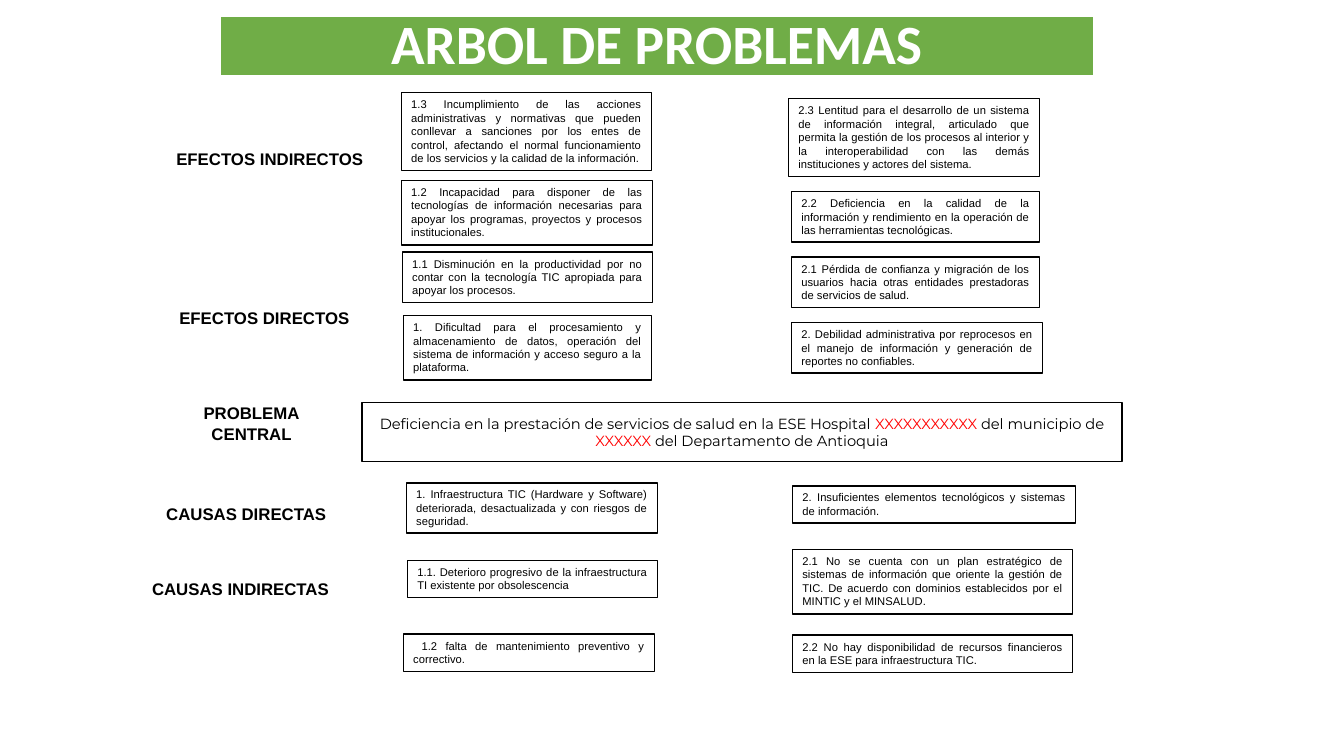
from pptx import Presentation
from pptx import util as u
from pptx.dml.color import RGBColor
from pptx.enum import shapes, text

COLORS = {"green": "70AD47", "white": "FFFFFF", "black": "000000", "red": "FF0000"}
ALIGN = text.PP_ALIGN
ANCHOR = text.MSO_ANCHOR

EFFECTS = [
    (0.06, 0, 2.48, 0.77, "1.3 Incumplimiento de las acciones administrativas y normativas que pueden conllevar a sanciones por los entes de control, afectando el normal funcionamiento de los servicios y la calidad de la información."),
    (0.06, 0.87, 2.49, 0.64, "1.2 Incapacidad para disponer de las tecnologías de información necesarias para apoyar los programas, proyectos y procesos institucionales."),
    (0.07, 1.58, 2.48, 0.5, "1.1 Disminución en la productividad por no contar con la tecnología TIC apropiada para apoyar los procesos."),
    (0.08, 2.21, 2.46, 0.64, "1. Dificultad para el procesamiento y almacenamiento de datos, operación del sistema de información y acceso seguro a la plataforma."),
    (3.9, 0.06, 2.49, 0.77, "2.3 Lentitud para el desarrollo de un sistema de información integral, articulado que permita la gestión de los procesos al interior y la interoperabilidad con las demás instituciones y actores del sistema."),
    (3.93, 0.98, 2.46, 0.5, "2.2 Deficiencia en la calidad de la información y rendimiento en la operación de las herramientas tecnológicas."),
    (3.93, 1.63, 2.46, 0.5, "2.1 Pérdida de confianza y migración de los usuarios hacia otras entidades prestadoras de servicios de salud."),
    (3.93, 2.28, 2.49, 0.5, "2. Debilidad administrativa por reprocesos en el manejo de información y generación de reportes no confiables."),
]
CAUSES = [
    (0.11, 0, 2.49, 0.5, "1. Infraestructura TIC (Hardware y Software) deteriorada, desactualizada y con riesgos de seguridad."),
    (0.12, 0.77, 2.48, 0.37, "1.1. Deterioro progresivo de la infraestructura TI existente por obsolescencia"),
    (0.08, 1.5, 2.49, 0.37, " 1.2 falta de mantenimiento preventivo y correctivo."),
    (3.94, 0.03, 2.81, 0.37, "2. Insuficientes elementos tecnológicos y sistemas de información."),
    (3.94, 0.66, 2.78, 0.64, "2.1 No se cuenta con un plan estratégico de sistemas de información que oriente la gestión de TIC. De acuerdo con dominios establecidos por el MINTIC y el MINSALUD."),
    (3.94, 1.51, 2.78, 0.37, "2.2 No hay disponibilidad de recursos financieros en la ESE para infraestructura TIC."),
]
EFFECT_LABELS = [
    (-2.27, 0.51, 2.08, 0.3, "EFECTOS INDIRECTOS"),
    (-2.24, 2.08, 1.91, 0.3, "EFECTOS DIRECTOS"),
]
CAUSE_LABELS = [
    (-2.37, 0.16, 1.8, 0.3, "CAUSAS DIRECTAS"),
    (-2.51, 0.9, 1.97, 0.3, "CAUSAS INDIRECTAS"),
]
PROBLEM = [
    ("Deficiencia en la prestación de servicios de salud en la ESE Hospital ", "black"),
    ("XXXXXXXXXXX", "red"),
    (" del municipio de ", "black"),
    ("XXXXXX", "red"),
    (" del Departamento de Antioquia", "black"),
]


def rgb(name):
    return RGBColor.from_string(COLORS[name])


def write(sp, paragraphs, size=8, font="Arial", color="black", bold=False,
          align=ALIGN.JUSTIFY, anchor=ANCHOR.TOP, spacing=None, wrap=True, grow=False):
    tf = sp.text_frame
    tf.word_wrap = wrap
    tf.vertical_anchor = anchor
    if grow:
        tf.auto_size = text.MSO_AUTO_SIZE.SHAPE_TO_FIT_TEXT
    for i, runs in enumerate(paragraphs):
        p = tf.add_paragraph() if i else tf.paragraphs[0]
        p.alignment = align
        if spacing:
            p.line_spacing = spacing
        for content, run_color in runs:
            r = p.add_run()
            r.text = content
            r.font.size = u.Pt(size)
            r.font.name = font
            r.font.bold = bold
            r.font.color.rgb = rgb(run_color or color)


def add_box(slide, box, fill="white", line="black", width=1):
    sp = slide.shapes.add_shape(shapes.MSO_SHAPE.RECTANGLE, *map(u.Inches, box))
    sp.shadow.inherit = False
    sp.fill.solid()
    sp.fill.fore_color.rgb = rgb(fill)
    sp.line.color.rgb = rgb(line)
    sp.line.width = u.Pt(width)
    return sp


def add_label(slide, box, lines, align=ALIGN.LEFT):
    sp = slide.shapes.add_textbox(*map(u.Inches, box))
    write(sp, [[(line, None)] for line in lines], size=12, bold=True,
          align=align, wrap=False, grow=True)


def add_title(slide, box):
    sp = add_box(slide, box, fill="green", line="white", width=1.5)
    write(sp, [[("ARBOL DE PROBLEMAS", None)]], size=39.6, font="Calibri", color="white",
          bold=True, align=ALIGN.CENTER, anchor=ANCHOR.MIDDLE, spacing=0.9)


def add_problem(slide, box):
    left, top, width, height = box
    add_label(slide, (left - 1.7, top - 0.04, 1.21, 0.5), ["PROBLEMA", "CENTRAL"], ALIGN.CENTER)
    write(add_box(slide, box), [PROBLEM], size=10.5, font="Montserrat",
          align=ALIGN.CENTER, anchor=ANCHOR.MIDDLE)


def add_branches(slide, origin, labels, notes):
    left, top = origin
    for x, y, w, h, label in labels:
        add_label(slide, (left + x, top + y, w, h), [label])
    for x, y, w, h, note in notes:
        write(add_box(slide, (left + x, top + y, w, h)), [[(note, None)]], grow=True)


def main():
    prs = Presentation()
    prs.slide_width, prs.slide_height = u.Inches(13.33), u.Inches(7.5)
    slide = prs.slides.add_slide(prs.slide_layouts[6])
    add_title(slide, (2.18, 0.16, 8.67, 0.6))
    add_branches(slide, (3.92, 0.92), EFFECT_LABELS, EFFECTS)
    add_problem(slide, (3.59, 3.99, 7.54, 0.59))
    add_branches(slide, (3.92, 4.79), CAUSE_LABELS, CAUSES)
    prs.save("out.pptx")


if __name__ == "__main__":
    main()
